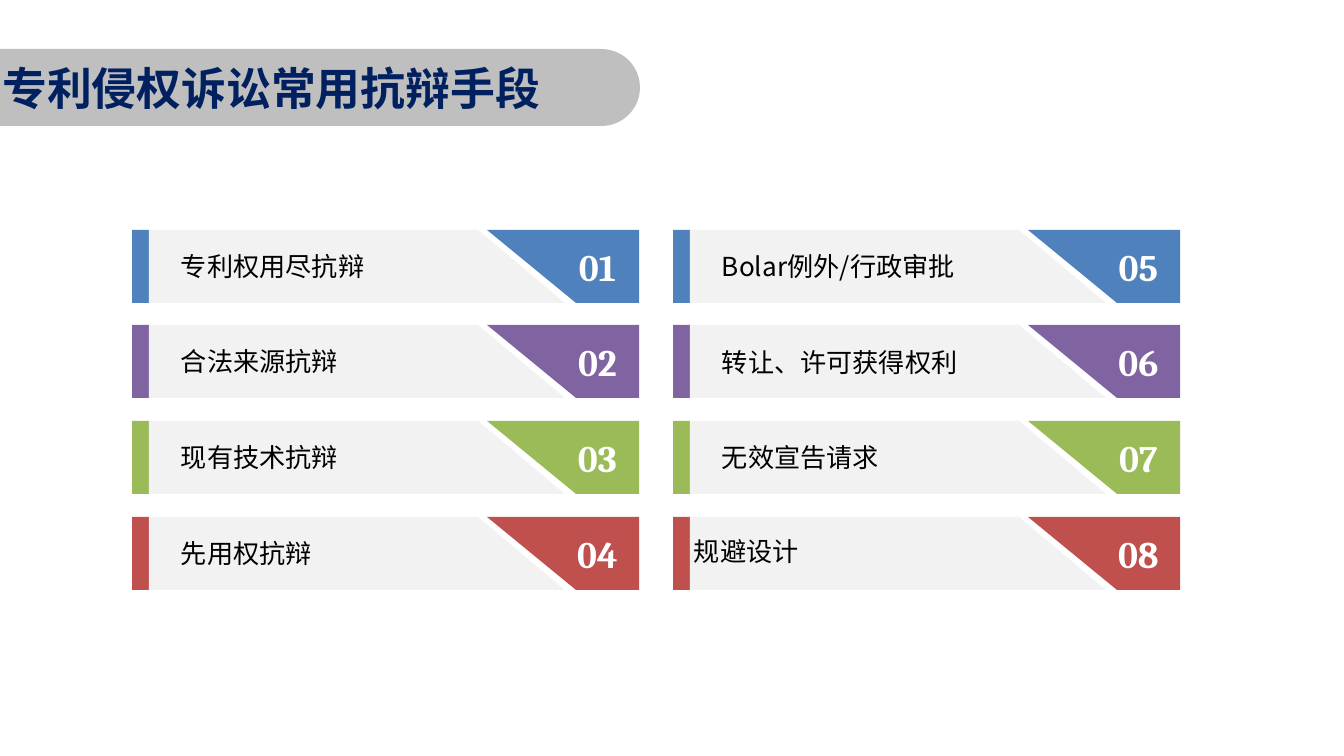
from pptx import Presentation
from pptx.dml.color import RGBColor
from pptx.enum.shapes import MSO_SHAPE as SHAPE
from pptx.enum.text import MSO_ANCHOR as ANCHOR, PP_ALIGN as ALIGN
from pptx.oxml.ns import qn
from pptx.util import Pt

NAVY = RGBColor(0x00, 0x20, 0x60)
SILVER = RGBColor(0xBF, 0xBF, 0xBF)
PALE = RGBColor(0xF2, 0xF2, 0xF2)
BLACK = RGBColor(0, 0, 0)
WHITE = RGBColor(0xFF, 0xFF, 0xFF)
ROW_COLORS = [
    RGBColor(0x4F, 0x81, 0xBD),
    RGBColor(0x80, 0x64, 0xA2),
    RGBColor(0x9B, 0xBB, 0x59),
    RGBColor(0xC0, 0x50, 0x4D),
]

TITLE = "专利侵权诉讼常用抗辩手段"
DEFENSES = [
    "专利权用尽抗辩", "合法来源抗辩", "现有技术抗辩", "先用权抗辩",
    "Bolar例外/行政审批", "转让、许可获得权利", "无效宣告请求", "规避设计",
]
LABEL_SHIFT = {"转让、许可获得权利": (0, 1), "规避设计": (-28, -2)}

PX = 914400 / 134.4
CJK = "Noto Sans CJK SC"
TITLE_FONT = {"name": CJK, "size": Pt(24), "bold": True}
LABEL_FONT = {"name": CJK, "size": Pt(14), "bold": False}
NUMBER_FONT = {"name": "Cambria", "size": Pt(20), "bold": True}

LEFT, TOP, COL_PITCH, ROWS, ROW_SPAN = 132, 230, 541, 4, 287
CARD_W, CARD_H, BAR_W = 507, 73, 17


def emu(*lengths):
    return [round(v * PX) for v in lengths]


def paint(s, color):
    s.shadow.inherit = False
    s.fill.solid()
    s.fill.fore_color.rgb = color
    s.line.fill.background()
    return s


def add_outline(shapes, points, color):
    builder = shapes.build_freeform(*points[0], scale=PX)
    builder.add_line_segments(points[1:], close=True)
    return paint(builder.convert_to_shape(), color)


def write(s, text, font, color, align=ALIGN.LEFT, inset=0):
    tf = s.text_frame
    margins = {"margin_left": emu(inset)[0], "margin_right": 0, "margin_top": 0, "margin_bottom": 0}
    for name, value in {"word_wrap": True, "vertical_anchor": ANCHOR.MIDDLE, **margins}.items():
        setattr(tf, name, value)
    p = tf.paragraphs[0]
    p.alignment = align
    r = p.add_run()
    r.text = text
    for name, value in font.items():
        setattr(r.font, name, value)
    r.font.color.rgb = color
    ea = r.font._element.makeelement(qn("a:ea"), {"typeface": font["name"]})
    r.font._element.find(qn("a:latin")).addnext(ea)


def add_card(shapes, x, y, number, label, color):
    bottom = y + CARD_H
    wedge = [(x + 355, y), (x + CARD_W, y), (x + CARD_W, bottom), (x + 444, bottom)]
    panel = [(x + BAR_W, y), (x + 346, y), (x + 433, bottom), (x + BAR_W, bottom)]
    add_outline(shapes, wedge, color)
    paint(shapes.add_shape(SHAPE.RECTANGLE, *emu(x, y, BAR_W, CARD_H)), color)
    add_outline(shapes, panel, PALE)
    dx, dy = LABEL_SHIFT.get(label, (0, 0))
    write(shapes.add_textbox(*emu(x + 49 + dx, y + 20 + dy, 312, 32)), label, LABEL_FONT, BLACK)
    write(shapes.add_textbox(*emu(x + 442, y + 17, 47, 39)), f"{number:02}", NUMBER_FONT, WHITE, ALIGN.CENTER)


prs = Presentation()
prs.slide_width, prs.slide_height = emu(1344, 756)
shapes = prs.slides.add_slide(prs.slide_layouts[6]).shapes

banner = paint(shapes.add_shape(SHAPE.ROUNDED_RECTANGLE, *emu(-47, 49, 687, 77)), SILVER)
banner.adjustments[0] = 0.5
write(banner, TITLE, TITLE_FONT, NAVY, inset=38)

for i, label in enumerate(DEFENSES):
    col, row = divmod(i, ROWS)
    y = TOP + row * ROW_SPAN // (ROWS - 1)
    add_card(shapes, LEFT + col * COL_PITCH, y, i + 1, label, ROW_COLORS[row])

prs.save("out.pptx")
